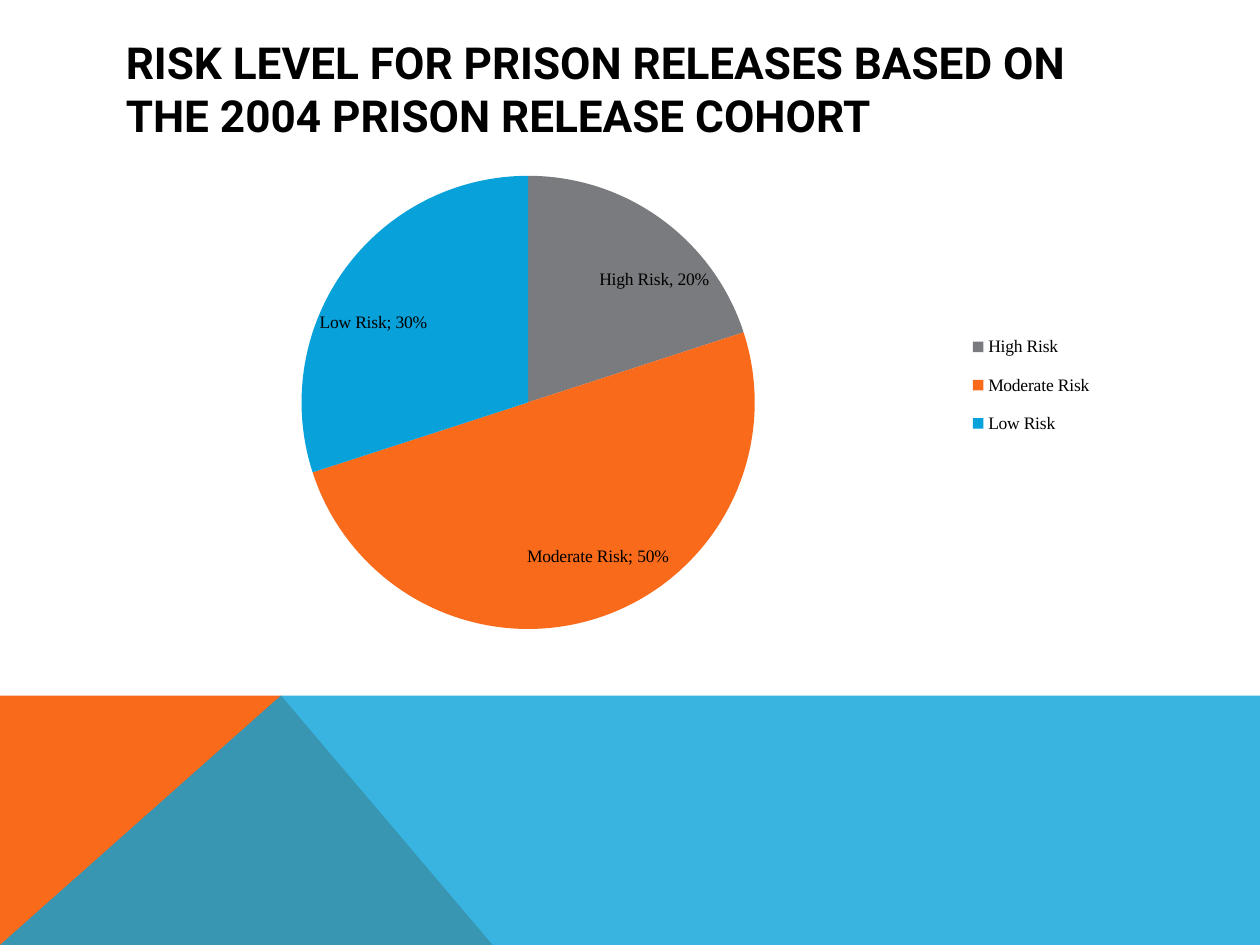
from lxml.etree import SubElement
from pptx import Presentation
from pptx.chart.data import CategoryChartData
from pptx.dml.color import RGBColor
from pptx.enum.chart import XL_CHART_TYPE, XL_LABEL_POSITION, XL_LEGEND_POSITION
from pptx.enum.text import MSO_ANCHOR
from pptx.oxml import parse_xml
from pptx.oxml.ns import nsdecls, qn
from pptx.util import Inches, Pt

COLORS = {"black": "000000", "gray": "797B7E", "orange": "F96A1B", "blue": "08A1D9"}
WIDTH, HEIGHT = 10, 7.5
BAND_TOP, PEAK = 5.52, 2.23
TITLE = "RISK LEVEL FOR PRISON RELEASES BASED ON THE 2004 PRISON RELEASE COHORT"
TITLE_BOX = (0.9, 0.4, 8.22, 0.6)
CHART_BOX = (0.9, 1.2, 8.23, 3.91)
# name, share, color, label offset as shares of the chart, custom label text
RISKS = [
    ("High Risk", 0.2, "gray", (0.05, 0.09), "High Risk, 20%"),
    ("Moderate Risk", 0.5, "orange", (0.07, -0.09), None),
    ("Low Risk", 0.3, "blue", (-0.03, 0.08), None),
]
BANDS = [
    ("orange", 100, [(0, HEIGHT), (0, BAND_TOP), (PEAK, BAND_TOP), (3.91, HEIGHT)]),
    ("blue", 80, [(0, HEIGHT), (PEAK, BAND_TOP), (WIDTH, BAND_TOP), (WIDTH, HEIGHT)]),
]


def color(name):
    return RGBColor.from_string(COLORS[name])


def set_font(font, name, size):
    font.name, font.size = name, Pt(size)
    font.color.rgb = color("black")


def add_band(slide, color_name, opacity, points):
    corners = [(Inches(x), Inches(y)) for x, y in points]
    builder = slide.shapes.build_freeform(*corners[0])
    builder.add_line_segments(corners[1:], close=True)
    shape = builder.convert_to_shape()
    shape.shadow.inherit = False
    shape.fill.solid()
    shape.fill.fore_color.rgb = color(color_name)
    shape.line.fill.background()
    if opacity < 100:
        fill_color = shape.element.spPr.find(qn("a:solidFill"))[0]
        SubElement(fill_color, qn("a:alpha"), val=str(opacity * 1000))


def place(element, after, **settings):
    """Give a chart part a manual layout, after the named child or else first."""
    for layout in element.findall(qn("c:layout")):
        element.remove(layout)
    items = "".join(f'<c:{key} val="{value}"/>' for key, value in settings.items())
    layout = parse_xml(
        f"<c:layout {nsdecls('c')}><c:manualLayout>{items}</c:manualLayout></c:layout>")
    if after:
        element.find(qn(after)).addnext(layout)
    else:
        element.insert(0, layout)


def add_title(slide):
    frame = slide.shapes.add_textbox(*map(Inches, TITLE_BOX)).text_frame
    frame.word_wrap = True
    frame.vertical_anchor = MSO_ANCHOR.MIDDLE
    run = frame.paragraphs[0].add_run()
    run.text = TITLE
    set_font(run.font, "Roboto", 25.2)
    run.font.bold = True


def add_labels(chart):
    series = chart.plots[0].series[0]
    labels = series.data_labels
    labels.show_value = labels.show_category_name = True
    labels.number_format, labels.number_format_is_linked = "0%", False
    labels.position = XL_LABEL_POSITION.INSIDE_END
    set_font(labels.font, "Times New Roman", 10)

    for index, (_, _, _, _, text) in enumerate(RISKS):
        label = series.points[index].data_label
        if text:
            run = label.text_frame.paragraphs[0].add_run()
            run.text = text
            set_font(run.font, "Times New Roman", 10)
        else:
            set_font(label.font, "Times New Roman", 10)
        label.position = XL_LABEL_POSITION.INSIDE_END

    all_labels = chart.element.find(".//" + qn("c:dLbls"))
    point_labels = all_labels.findall(qn("c:dLbl"))
    for element, (_, _, _, (x, y), _) in zip(point_labels, RISKS):
        place(element, "c:idx", x=x, y=y)
    for element in [all_labels, *point_labels]:
        element.find(qn("c:showCatName")).set("val", "1")
        separator = parse_xml(f"<c:separator {nsdecls('c')}>; </c:separator>")
        element.find(qn("c:showBubbleSize")).addnext(separator)


def add_risk_chart(slide):
    data = CategoryChartData(number_format="0%")
    data.categories = [risk[0] for risk in RISKS]
    data.add_series("Series 1", [risk[1] for risk in RISKS])
    chart = slide.shapes.add_chart(XL_CHART_TYPE.PIE, *map(Inches, CHART_BOX), data).chart
    set_font(chart.font, "Times New Roman", 10)
    chart.has_title = False
    chart.has_legend = True
    chart.legend.position = XL_LEGEND_POSITION.RIGHT
    chart.legend.include_in_layout = False
    set_font(chart.legend.font, "Times New Roman", 10)

    plot = chart.plots[0]
    plot.vary_by_categories = True
    for index, risk in enumerate(RISKS):
        fill = plot.series[0].points[index].format.fill
        fill.solid()
        fill.fore_color.rgb = color(risk[2])
    add_labels(chart)

    place(chart.element.find(".//" + qn("c:plotArea")), None, layoutTarget="inner",
          xMode="edge", yMode="edge", x=0.18, y=0.05, w=0.44, h=0.92)
    place(chart.element.find(".//" + qn("c:legend")), "c:legendPos",
          xMode="edge", yMode="edge", x=0.81, y=0.34, w=0.15, h=0.27)


def main():
    presentation = Presentation()
    presentation.slide_width, presentation.slide_height = Inches(WIDTH), Inches(HEIGHT)
    slide = presentation.slides.add_slide(presentation.slide_layouts[6])
    for band in BANDS:
        add_band(slide, *band)
    add_title(slide)
    add_risk_chart(slide)
    presentation.save("out.pptx")


if __name__ == "__main__":
    main()
